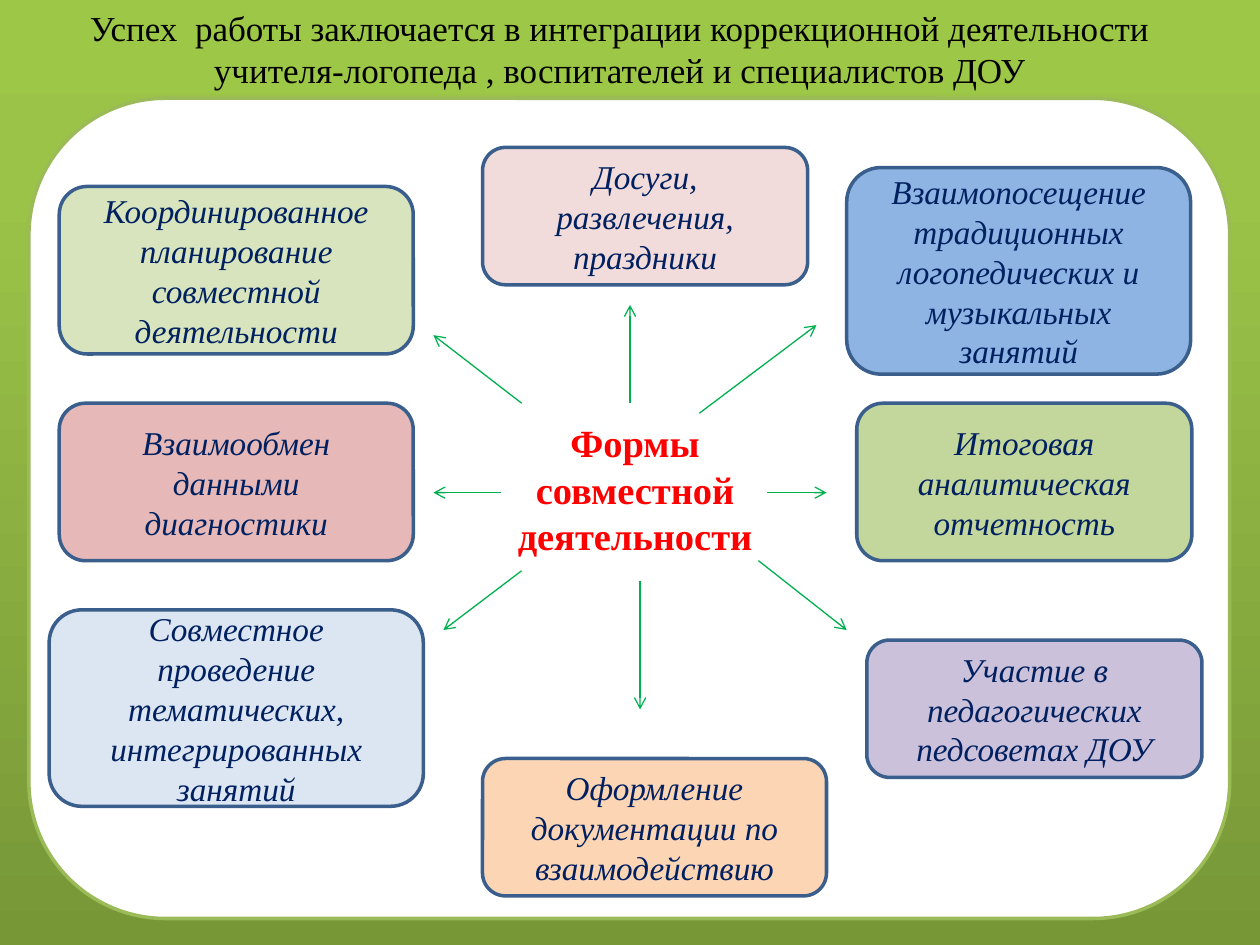
"""Slide showing eight forms of joint work around a central heading."""
from copy import deepcopy
from dataclasses import dataclass

from lxml import etree
from pptx import Presentation, util as u
from pptx.dml import color
from pptx.enum import shapes, text
from pptx.oxml import ns
from pptx.shapes.autoshape import Shape
from pptx.slide import Slide


@dataclass(frozen=True)
class Theme:
    font: str = "Times New Roman"
    title_size: float = 20
    centre_size: float = 22
    card_size: float = 19
    title_ink: str = "000000"
    centre_ink: str = "FF0000"
    card_ink: str = "002060"
    card_line: str = "3A5F8C"
    panel_fill: str = "FFFFFF"
    panel_line: str = "9BBB59"
    arrow: str = "00B050"
    outline: float = 2
    arrow_width: float = 0.75
    backdrop: tuple = ((0, "779737"), (0.8, "9BC348"), (1, "9DC746"))


@dataclass(frozen=True)
class Area:
    left: float
    top: float
    width: float
    height: float

    def lengths(self) -> list[u.Length]:
        return [u.Inches(n) for n in (self.left, self.top, self.width, self.height)]


@dataclass(frozen=True)
class Card:
    label: str
    area: Area
    fill: str


@dataclass(frozen=True)
class Arrow:
    start: tuple[float, float]
    end: tuple[float, float]


THEME = Theme()
PAGE = Area(0, 0, 10, 7.5)
PANEL = Area(0.23, 0.78, 9.53, 6.51)
TITLE = Area(0, 0, 9.84, 0.77)
CENTRE = Area(3.75, 3.28, 2.58, 1.21)
TITLE_LINES = (
    "Успех  работы заключается в интеграции коррекционной деятельности",
    "учителя-логопеда , воспитателей и специалистов ДОУ",
)
CARDS = (
    Card("Досуги, развлечения, праздники", Area(3.83, 1.17, 2.58, 1.09), "F2DCDB"),
    Card("Взаимообмен данными диагностики", Area(0.47, 3.2, 2.81, 1.25), "E6B9B8"),
    Card("Итоговая аналитическая отчетность", Area(6.8, 3.2, 2.66, 1.25), "C3D69B"),
    Card("Координированное планирование совместной деятельности",
         Area(0.47, 1.48, 2.81, 1.33), "D7E4BD"),
    Card("Взаимопосещение традиционных логопедических и музыкальных занятий",
         Area(6.72, 1.33, 2.73, 1.64), "8EB4E3"),
    Card("Совместное проведение тематических, интегрированных занятий",
         Area(0.39, 4.84, 2.97, 1.56), "DCE6F2"),
    Card("Оформление документации по взаимодействию",
         Area(3.83, 6.02, 2.73, 1.09), "FCD5B5"),
    Card("Участие в педагогических педсоветах ДОУ",
         Area(6.88, 5.08, 2.66, 1.09), "CCC1DA"),
)
ARROWS = (
    Arrow((5, 3.2), (5, 2.42)),
    Arrow((5.55, 3.28), (6.48, 2.58)),
    Arrow((6.09, 3.91), (6.56, 3.91)),
    Arrow((6.02, 4.45), (6.72, 5)),
    Arrow((5.08, 4.61), (5.08, 5.63)),
    Arrow((4.14, 4.53), (3.52, 5)),
    Arrow((3.98, 3.91), (3.44, 3.91)),
    Arrow((4.14, 3.2), (3.44, 2.66)),
)


def rgb(code: str) -> color.RGBColor:
    return color.RGBColor.from_string(code)


def write(box: Shape, lines: tuple[str, ...], ink: str, size: float, **style: bool) -> None:
    frame = box.text_frame
    frame.word_wrap = True
    for index, line in enumerate(lines):
        para = frame.add_paragraph() if index else frame.paragraphs[0]
        para.alignment = text.PP_ALIGN.CENTER
        span = para.add_run()
        span.text = line
        span.font.color.rgb = rgb(ink)
        for name, value in {"name": THEME.font, "size": u.Pt(size), **style}.items():
            setattr(span.font, name, value)


def add_label(page: Slide, area: Area, lines: tuple[str, ...], ink: str,
              size: float, **style: bool) -> None:
    box = page.shapes.add_textbox(*area.lengths())
    write(box, lines, ink, size, **style)
    box.text_frame.auto_size = text.MSO_AUTO_SIZE.SHAPE_TO_FIT_TEXT


def add_backdrop(page: Slide) -> None:
    box = page.shapes.add_shape(shapes.MSO_SHAPE.RECTANGLE, *PAGE.lengths())
    box.shadow.inherit = False
    box.line.fill.background()
    box.fill.gradient()
    box.fill.gradient_angle = 90
    stops = box.element.spPr.find(".//" + ns.qn("a:gsLst"))
    stops.append(deepcopy(stops[0]))
    for stop, (position, code) in zip(box.fill.gradient_stops, THEME.backdrop):
        stop.position = position
        stop.color.rgb = rgb(code)


def add_rounded(page: Slide, area: Area, fill: str, line: str) -> Shape:
    box = page.shapes.add_shape(shapes.MSO_SHAPE.ROUNDED_RECTANGLE, *area.lengths())
    box.shadow.inherit = False
    box.fill.solid()
    box.fill.fore_color.rgb = rgb(fill)
    box.line.color.rgb = rgb(line)
    box.line.width = u.Pt(THEME.outline)
    return box


def add_card(page: Slide, card: Card) -> None:
    box = add_rounded(page, card.area, card.fill, THEME.card_line)
    box.text_frame.vertical_anchor = text.MSO_ANCHOR.MIDDLE
    write(box, (card.label,), THEME.card_ink, THEME.card_size, italic=True)


def add_arrow(page: Slide, arrow: Arrow) -> None:
    ends = [u.Inches(n) for n in (*arrow.start, *arrow.end)]
    line = page.shapes.add_connector(shapes.MSO_CONNECTOR.STRAIGHT, *ends)
    line.line.color.rgb = rgb(THEME.arrow)
    line.line.width = u.Pt(THEME.arrow_width)
    etree.SubElement(line.line._get_or_add_ln(), ns.qn("a:tailEnd"), type="arrow")
    etree.SubElement(line._element.spPr, ns.qn("a:effectLst"))


def main() -> None:
    deck = Presentation()
    deck.slide_width, deck.slide_height = u.Inches(PAGE.width), u.Inches(PAGE.height)
    page = deck.slides.add_slide(deck.slide_layouts[6])
    add_backdrop(page)
    add_rounded(page, PANEL, THEME.panel_fill, THEME.panel_line)
    add_label(page, TITLE, TITLE_LINES, THEME.title_ink, THEME.title_size)
    add_label(page, CENTRE, ("Формы совместной деятельности",),
              THEME.centre_ink, THEME.centre_size, bold=True)
    for card in CARDS:
        add_card(page, card)
    for arrow in ARROWS:
        add_arrow(page, arrow)
    deck.save("out.pptx")


if __name__ == "__main__":
    main()
